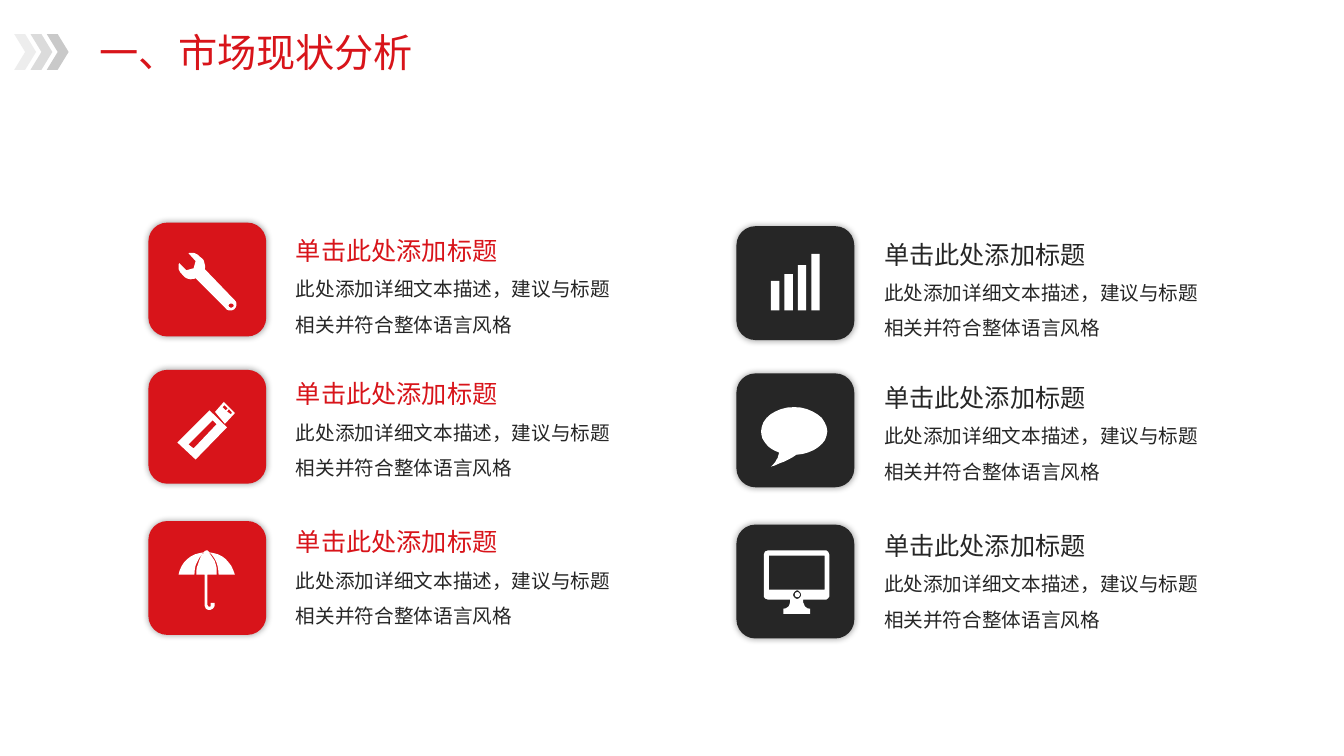
from pptx import Presentation
from pptx.dml.color import RGBColor
from pptx.enum.shapes import MSO_SHAPE
from pptx.enum.text import MSO_ANCHOR, MSO_AUTO_SIZE, PP_ALIGN
from pptx.oxml.ns import qn
from pptx.util import Cm, Pt
from lxml.etree import SubElement

HUES = {"red": "D8141A", "dark": "262626", "white": "FFFFFF", "black": "000000",
        "pale": "EDEDED", "mid": "DBDBDB", "grey": "C9C9C9"}
HEAD = "单击此处添加标题"
BODY = "此处添加详细文本描述，建议与标题相关并符合整体语言风格"

# Icon outlines in hundredths of a centimetre: pairs are corners, sixes are cubic curves
WRENCH = [
    [(516, 678), (518, 668, 516, 655, 505, 648), (498, 638, 485, 635, 475, 638),
     (493, 658), (488, 676), (470, 681), (452, 663),
     (447, 673, 450, 683, 460, 693), (470, 704, 483, 706, 493, 701), (569, 777),
     (572, 782, 577, 782, 582, 782), (584, 782, 589, 782, 592, 777),
     (597, 772, 597, 762, 592, 757)],
    [(576, 770), (576, 767, 579, 765, 582, 765), (586, 765, 589, 767, 589, 770),
     (589, 773, 586, 775, 582, 775), (579, 775, 576, 773, 576, 770)]]
PLUG = [
    [(542, 1038), (564, 1013), (592, 1041), (567, 1068)],
    [(569, 1034), (561, 1026), (566, 1021), (574, 1029)],
    [(582, 1044), (572, 1037), (577, 1031), (585, 1040)]]
STICK = [
    [(528, 1034), (447, 1115), (493, 1158), (572, 1077)],
    [(488, 1130), (475, 1120), (536, 1059), (546, 1069)]]
BROLLY = [
    [(551, 1448), (592, 1448), (584, 1417, 559, 1394, 528, 1392),
     (526, 1389, 523, 1387, 521, 1387), (518, 1387, 516, 1389, 513, 1392),
     (483, 1394, 455, 1417, 450, 1448), (490, 1448),
     (490, 1412, 511, 1397, 513, 1392), (513, 1394),
     (493, 1419, 495, 1448, 495, 1448), (516, 1448), (516, 1524),
     (516, 1532, 521, 1537, 528, 1537), (533, 1537, 541, 1532, 541, 1524),
     (541, 1519), (531, 1519), (531, 1524),
     (531, 1527, 531, 1529, 528, 1529), (526, 1529, 523, 1527, 523, 1524),
     (523, 1448), (546, 1448), (546, 1448, 551, 1420, 528, 1394), (528, 1392),
     (533, 1397, 551, 1412, 551, 1448)]]
BUBBLE = [
    [(2085, 1087), (2085, 1054, 2047, 1026, 2002, 1026),
     (1953, 1026, 1918, 1054, 1918, 1087), (1918, 1110, 1935, 1130, 1963, 1140),
     (1963, 1146, 1961, 1158, 1943, 1176), (1943, 1176, 1984, 1163, 2007, 1146),
     (2050, 1143, 2085, 1118, 2085, 1087)]]
SCREEN = [
    [(2080, 1387), (1938, 1387), (1930, 1387, 1925, 1392, 1925, 1400),
     (1925, 1501), (1925, 1506, 1930, 1511, 1938, 1511), (1991, 1511),
     (1991, 1511, 1994, 1534, 1974, 1534), (1974, 1547), (2042, 1547),
     (2042, 1534), (2022, 1534, 2024, 1511, 2024, 1511), (2080, 1511),
     (2085, 1511, 2090, 1506, 2090, 1501), (2090, 1400),
     (2090, 1392, 2085, 1387, 2080, 1387)],
    [(1938, 1400), (2078, 1400), (2078, 1486), (1938, 1486)],
    [(1999, 1499), (1999, 1494, 2004, 1488, 2009, 1488),
     (2014, 1488, 2019, 1494, 2019, 1499), (2019, 1504, 2014, 1509, 2009, 1509),
     (2004, 1509, 1999, 1504, 1999, 1499)]]

deck = Presentation()
deck.slide_width, deck.slide_height = Cm(33.87), Cm(19.05)
slide = deck.slides.add_slide(deck.slide_layouts[5])
shapes = slide.shapes


def paint(shape, hue):
    """Give a shape a flat fill with no line or shadow."""
    shape.shadow.inherit = False
    shape.fill.solid()
    shape.fill.fore_color.rgb = RGBColor.from_string(HUES[hue])
    shape.line.fill.background()
    return shape


def style(para, size, face, hue):
    """Set size, colour and both the Latin and East Asian font."""
    para.font.size = Pt(size)
    para.font.color.rgb = RGBColor.from_string(HUES[hue])
    para.font.name = face
    props = para._p.get_or_add_pPr().find(qn("a:defRPr"))
    SubElement(props, qn("a:ea")).set("typeface", face)


# Heading
for i, hue in enumerate(["pale", "mid", "grey"]):
    paint(shapes.add_shape(MSO_SHAPE.CHEVRON, Cm(0.36 + 0.41 * i), Cm(0.86),
                           Cm(0.55), Cm(0.9)), hue)
title = shapes.title
title.left, title.top, title.width, title.height = Cm(2.26), Cm(0.58), Cm(8.48), Cm(1.45)
frame = title.text_frame
frame.text = "一、市场现状分析"
frame.word_wrap = False
frame.auto_size = MSO_AUTO_SIZE.NONE
frame.vertical_anchor = MSO_ANCHOR.MIDDLE
frame.paragraphs[0].alignment = PP_ALIGN.LEFT
style(frame.paragraphs[0], 28, "Noto Sans CJK JP", "red")

# Six tiles, each with its text
for col, hue in enumerate(["red", "dark"]):
    right, down = 14.82 * col, 0.09 * col
    for high, top in [(5.61, 5.61), (9.32, 9.22), (13.13, 12.95)]:
        tile = paint(shapes.add_shape(MSO_SHAPE.ROUNDED_RECTANGLE, Cm(3.74 + right),
                                      Cm(high + down), Cm(2.97), Cm(2.87)), hue)
        glow = SubElement(tile._element.spPr.find(qn("a:effectLst")), qn("a:outerShdw"),
                          blurRad=str(Pt(5)), dist="0", dir="0", algn="ctr", rotWithShape="0")
        tint = SubElement(glow, qn("a:srgbClr"), val=HUES["black"])
        SubElement(tint, qn("a:alpha"), val="40000")

        box = shapes.add_textbox(Cm(7.12 + right), Cm(top + down), Cm(9.04), Cm(3.12))
        frame = box.text_frame
        frame.word_wrap = True
        frame.margin_left = frame.margin_right = Cm(0.34)
        frame.margin_top = frame.margin_bottom = Cm(0.17)
        head, body = frame.paragraphs[0], frame.add_paragraph()
        head.text, body.text = HEAD, BODY
        head.line_spacing, body.line_spacing = 1.2, 1.5
        style(head, 18, "Noto Sans CJK JP", hue)
        style(body, 14, "Noto Sans CJK SC", "dark")

# White icons
for icon in [WRENCH, PLUG, STICK, BROLLY, BUBBLE, SCREEN]:
    pen = None
    for ring in icon:
        dots = [ring[0]]
        for step in ring[1:]:
            if len(step) == 2:
                dots.append(step)
                continue
            a, b, c, d = dots[-1], step[:2], step[2:4], step[4:]
            for n in range(1, 9):
                t = n / 8
                u = 1 - t
                dots.append([u**3 * a[k] + 3 * u * u * t * b[k] + 3 * u * t * t * c[k]
                             + t**3 * d[k] for k in (0, 1)])
        if pen is None:
            pen = shapes.build_freeform(*dots[0], scale=Cm(0.01))
        else:
            pen.move_to(*dots[0])
        pen.add_line_segments(dots[1:], close=True)
    paint(pen.convert_to_shape(), "white")

for i, tall in enumerate([0.74, 0.91, 1.14, 1.42]):
    paint(shapes.add_shape(MSO_SHAPE.RECTANGLE, Cm(19.43 + 0.34 * i), Cm(7.82 - tall),
                           Cm(0.21), Cm(tall)), "white")
paint(shapes.add_shape(MSO_SHAPE.OVAL, Cm(20.03), Cm(14.92), Cm(0.13), Cm(0.13)), "white")

deck.save("out.pptx")
